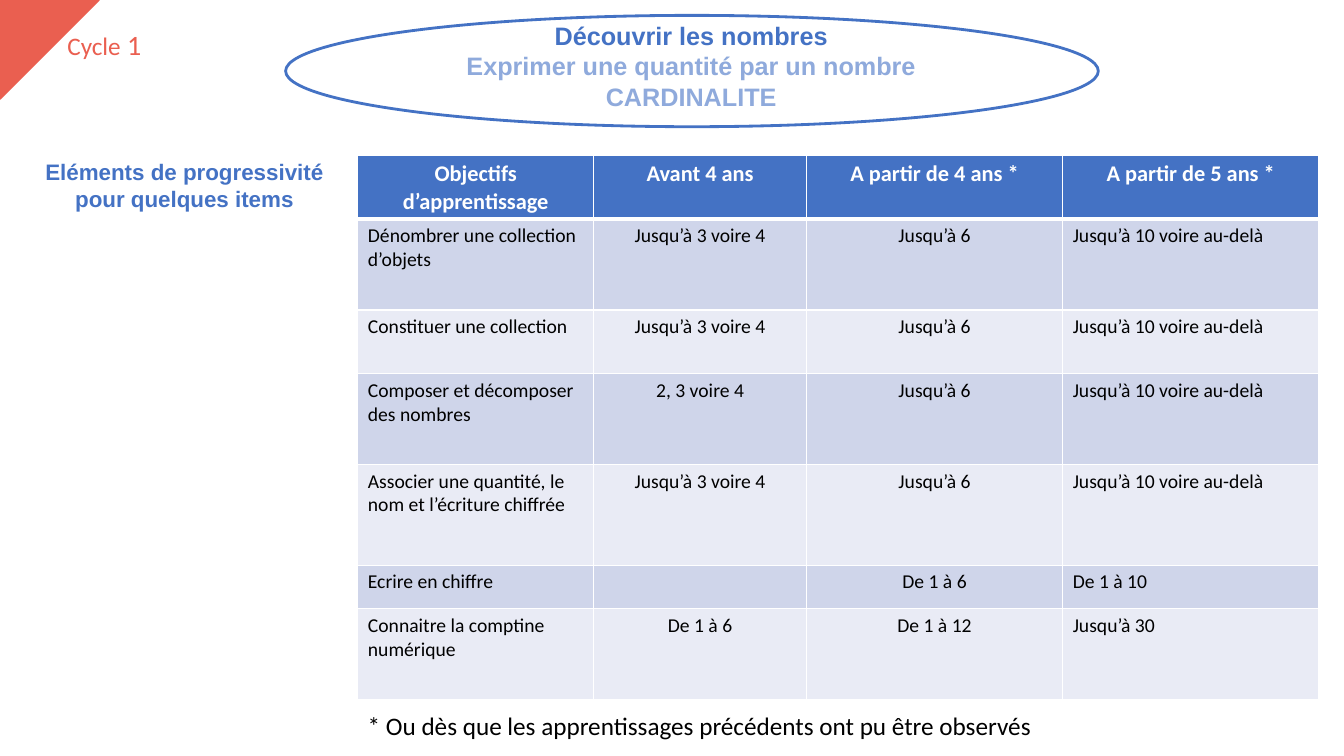
from lxml.etree import SubElement
from pptx import Presentation
from pptx.dml.color import RGBColor
from pptx.enum.shapes import MSO_SHAPE
from pptx.enum.text import MSO_ANCHOR, MSO_AUTO_SIZE, PP_ALIGN
from pptx.oxml.ns import qn
from pptx.util import Pt

COLOURS = {
    "blue": "4472C4",
    "pale_blue": "8FAADC",
    "coral": "EA5F50",
    "band_dark": "CFD5EA",
    "band_light": "E9EBF5",
    "black": "000000",
    "white": "FFFFFF",
}
HEADING = {"size": Pt(18), "name": "Arial", "bold": True, "colour": "blue"}
SUBHEADING = HEADING | {"colour": "pale_blue"}
ASIDE = HEADING | {"size": Pt(16)}
TABLE_HEAD = {"size": Pt(16), "name": "Calibri", "bold": True, "colour": "white"}
TABLE_BODY = {"size": Pt(14), "name": "Calibri", "bold": False, "colour": "black"}
FOOTNOTE = TABLE_BODY | {"size": Pt(18)}
CYCLE = FOOTNOTE | {"colour": "coral"}

COLUMN_WIDTHS = [168.5, 152, 183, 183]
ROW_HEIGHTS = [39, 64.8, 45.5, 64.8, 72, 31, 64.8]
PROGRESSION = [
    ["Objectifs d’apprentissage", "Avant 4 ans", "A partir de 4 ans *", "A partir de 5 ans *"],
    ["Dénombrer une collection d’objets", "Jusqu’à 3 voire 4", "Jusqu’à 6", "Jusqu’à 10 voire au-delà"],
    ["Constituer une collection", "Jusqu’à 3 voire 4", "Jusqu’à 6", "Jusqu’à 10 voire au-delà"],
    ["Composer et décomposer des nombres", "2, 3 voire 4", "Jusqu’à 6", "Jusqu’à 10 voire au-delà"],
    ["Associer une quantité, le nom et l’écriture chiffrée", "Jusqu’à 3 voire 4", "Jusqu’à 6",
     "Jusqu’à 10 voire au-delà"],
    ["Ecrire en chiffre", "", "De 1 à 6", "De 1 à 10"],
    ["Connaitre la comptine numérique", "De 1 à 6", "De 1 à 12", "Jusqu’à 30"],
]


class SlideBuilder:
    """Add styled elements to the current slide, with lengths in points."""

    def __init__(self, slide, colours):
        self.slide = slide
        self.colours = colours

    def colour(self, key):
        return RGBColor.from_string(self.colours[key])

    def fill_text(self, frame, lines, align):
        for number, line in enumerate(lines):
            paragraph = frame.add_paragraph() if number else frame.paragraphs[0]
            paragraph.alignment = align
            for words, style in line:
                run = paragraph.add_run()
                run.text = words
                for attribute, value in style.items():
                    if attribute == "colour":
                        run.font.color.rgb = self.colour(value)
                    else:
                        setattr(run.font, attribute, value)

    def title(self, box, lines):
        title = self.slide.shapes.title
        for attribute, value in zip(("left", "top", "width", "height"), box):
            setattr(title, attribute, Pt(value))
        frame = title.text_frame
        frame.auto_size = MSO_AUTO_SIZE.NONE
        frame.vertical_anchor = MSO_ANCHOR.MIDDLE
        self.fill_text(frame, lines, PP_ALIGN.CENTER)

    def text(self, box, lines, align=PP_ALIGN.CENTER):
        frame = self.slide.shapes.add_textbox(*map(Pt, box)).text_frame
        frame.word_wrap = True
        self.fill_text(frame, lines, align)

    def shape(self, preset, box, line, weight, fill=None, rotation=0):
        shape = self.slide.shapes.add_shape(preset, *map(Pt, box))
        shape.shadow.inherit = False
        shape.rotation = rotation
        shape.line.color.rgb = self.colour(line)
        shape.line.width = Pt(weight)
        if fill:
            shape.fill.solid()
            shape.fill.fore_color.rgb = self.colour(fill)
        else:
            shape.fill.background()

    def borders(self, cell, weights):
        properties = cell._tc.get_or_add_tcPr()
        for side, weight in weights.items():
            edge = SubElement(properties, qn(f"a:ln{side}"), w=str(Pt(weight)))
            SubElement(SubElement(edge, qn("a:solidFill")), qn("a:srgbClr"), val=self.colours["white"])

    def table(self, left, top, widths, heights, rows):
        box = map(Pt, (left, top, sum(widths), sum(heights)))
        table = self.slide.shapes.add_table(len(rows), len(widths), *box).table
        for column, width in zip(table.columns, widths):
            column.width = Pt(width)
        for row, height in zip(table.rows, heights):
            row.height = Pt(height)
        for r, row in enumerate(rows):
            style = TABLE_BODY if r else TABLE_HEAD
            fill = ("band_light", "band_dark")[r % 2] if r else "blue"
            for c, words in enumerate(row):
                cell = table.cell(r, c)
                self.borders(cell, {"L": 1, "R": 1, "T": 3 if r == 1 else 1, "B": 1 if r else 3})
                cell.fill.solid()
                cell.fill.fore_color.rgb = self.colour(fill)
                centred = r == 0 or c in (1, 2)
                if words:
                    self.fill_text(cell.text_frame, [[(words, style)]],
                                   PP_ALIGN.CENTER if centred else PP_ALIGN.LEFT)


def main():
    presentation = Presentation()
    presentation.slide_width, presentation.slide_height = Pt(960), Pt(540)
    builder = SlideBuilder(presentation.slides.add_slide(presentation.slide_layouts[5]), COLOURS)

    builder.text((8, 109.5, 247.5, 53), [[("Eléments de progressivité pour quelques items", ASIDE)]])
    builder.table(255.6, 111, COLUMN_WIDTHS, ROW_HEIGHTS, PROGRESSION)
    builder.text((255.6, 503.5, 587, 29),
                 [[("* Ou dès que les apprentissages précédents ont pu être observés", FOOTNOTE)]],
                 PP_ALIGN.LEFT)
    builder.title((215.5, 11, 556.5, 72), [
        [("Découvrir les nombres", HEADING)],
        [("Exprimer une quantité par un nombre", SUBHEADING)],
        [("CARDINALITE", SUBHEADING)],
    ])
    builder.shape(MSO_SHAPE.OVAL, (204, 11, 580.5, 79.5), "blue", 2)
    builder.shape(MSO_SHAPE.RIGHT_TRIANGLE, (0, 0, 70.8, 70.8), "coral", 1, "coral", 90)
    builder.text((35.3, 16, 78.5, 31.5), [[("Cycle", CYCLE), (" 1", CYCLE | {"size": Pt(20)})]])

    presentation.save("out.pptx")


if __name__ == "__main__":
    main()
